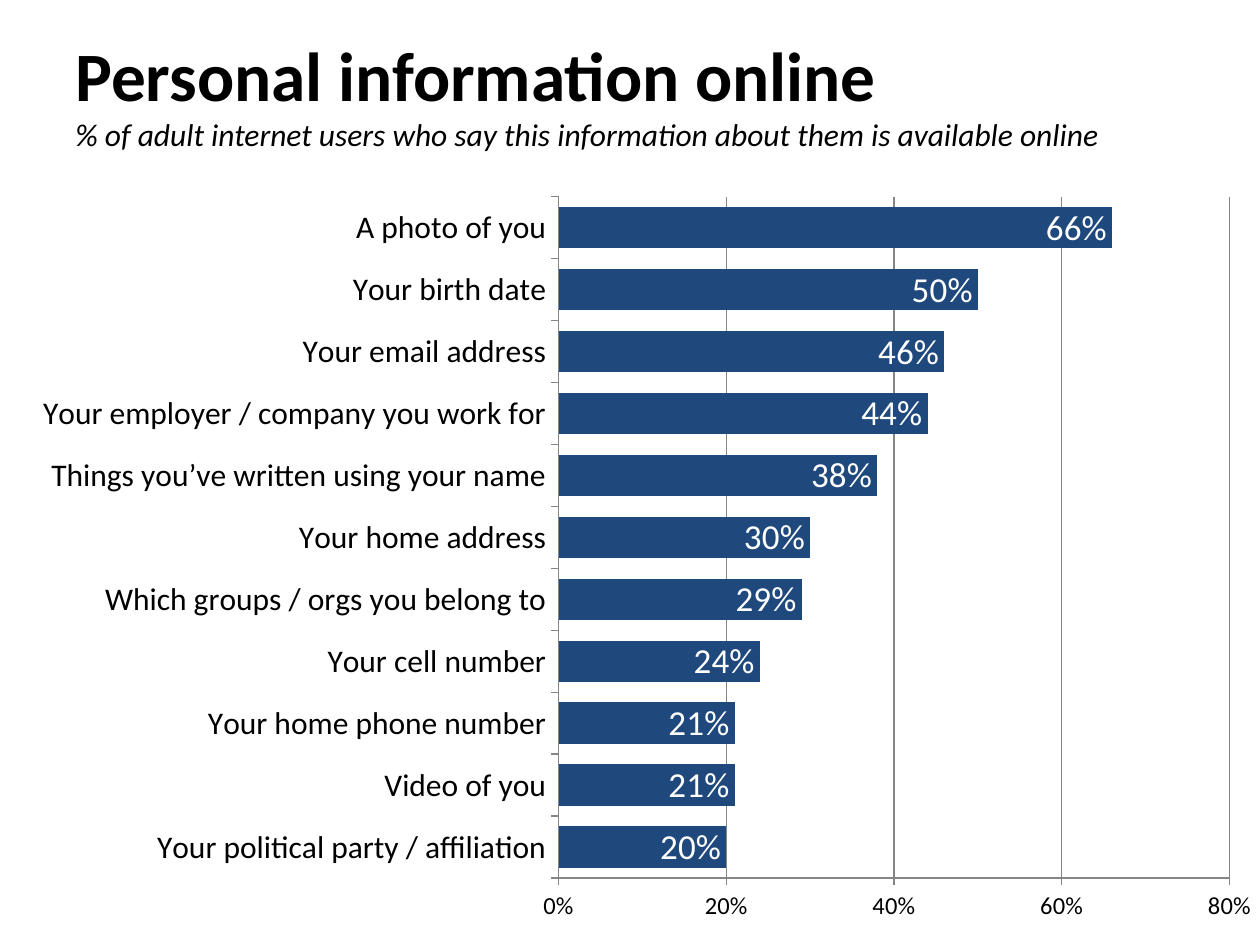
"""Build a slide with a bar chart of personal information available online."""
import pptx
import pptx.chart.data
import pptx.dml.color
import pptx.enum.chart
import pptx.enum.text
import pptx.oxml
import pptx.oxml.ns
import pptx.util

Pt = pptx.util.Pt
BLACK = pptx.dml.color.RGBColor(0x00, 0x00, 0x00)
WHITE = pptx.dml.color.RGBColor(0xFF, 0xFF, 0xFF)
NAVY = pptx.dml.color.RGBColor(0x1F, 0x49, 0x7D)
GRAY = pptx.dml.color.RGBColor(0x86, 0x86, 0x86)
FONT = "Calibri"

TITLE = "Personal information online"
SUBTITLE = "% of adult internet users who say this information about them is available online"
SHARES = [
    ("A photo of you", 0.66),
    ("Your birth date", 0.50),
    ("Your email address", 0.46),
    ("Your employer / company you work for", 0.44),
    ("Things you’ve written using your name", 0.38),
    ("Your home address", 0.30),
    ("Which groups / orgs you belong to", 0.29),
    ("Your cell number", 0.24),
    ("Your home phone number", 0.21),
    ("Video of you", 0.21),
    ("Your political party / affiliation", 0.20),
]
PLOT_AREA = {"x": 0.431, "y": 0.037, "w": 0.45, "h": 0.877}


def style_font(font, size, color=BLACK):
    font.name = FONT
    font.size = Pt(size)
    font.color.rgb = color


def add_heading(page):
    box = page.shapes.add_textbox(Pt(36), Pt(21.6), Pt(648), Pt(62.64))
    frame = box.text_frame
    frame.word_wrap = True
    frame.vertical_anchor = pptx.enum.text.MSO_ANCHOR.MIDDLE
    para = frame.paragraphs[0]
    title = para.add_run()
    title.text = TITLE
    style_font(title.font, 39.6)
    title.font.bold = True
    para.add_line_break()
    subtitle = para.add_run()
    subtitle.text = SUBTITLE
    style_font(subtitle.font, 18)
    subtitle.font.italic = True


def place_plot(chart):
    targets = '<c:layoutTarget val="inner"/><c:xMode val="edge"/><c:yMode val="edge"/>'
    sizes = "".join(f'<c:{side} val="{value}"/>' for side, value in PLOT_AREA.items())
    layout = pptx.oxml.parse_xml(
        f'<c:layout {pptx.oxml.ns.nsdecls("c")}><c:manualLayout>'
        f"{targets}{sizes}</c:manualLayout></c:layout>"
    )
    area = chart.element.chart.plotArea
    for old in area.findall(pptx.oxml.ns.qn("c:layout")):
        area.remove(old)
    area.insert(0, layout)


def add_share_chart(page):
    data = pptx.chart.data.CategoryChartData(number_format="0%")
    rows = SHARES[::-1]
    data.categories = [name for name, share in rows]
    data.add_series("Series 1", [share for name, share in rows])
    chart = page.shapes.add_chart(
        pptx.enum.chart.XL_CHART_TYPE.BAR_STACKED,
        Pt(-48), Pt(96), Pt(852), Pt(444), data,
    ).chart
    chart.has_legend = False
    chart.has_title = False
    style_font(chart.font, 10)
    place_plot(chart)

    for axis, size in ((chart.category_axis, 18), (chart.value_axis, 14)):
        style_font(axis.tick_labels.font, size)
        axis.major_tick_mark = pptx.enum.chart.XL_TICK_MARK.OUTSIDE
        axis.format.line.color.rgb = GRAY
        axis.format.line.width = Pt(0.75)
    scale = chart.value_axis
    scale.minimum_scale, scale.maximum_scale, scale.major_unit = 0, 0.8, 0.2
    scale.tick_labels.number_format = "0%"
    scale.tick_labels.number_format_is_linked = False
    scale.has_major_gridlines = True
    scale.major_gridlines.format.line.color.rgb = GRAY
    scale.major_gridlines.format.line.width = Pt(0.75)

    plot = chart.plots[0]
    plot.gap_width = 50
    plot.overlap = 100
    plot.vary_by_categories = False
    bars = plot.series[0]
    bars.format.fill.solid()
    bars.format.fill.fore_color.rgb = NAVY
    labels = bars.data_labels
    labels.show_value = True
    labels.number_format = "0%"
    labels.number_format_is_linked = False
    labels.position = pptx.enum.chart.XL_LABEL_POSITION.INSIDE_END
    style_font(labels.font, 20, WHITE)


def main():
    deck = pptx.Presentation()
    deck.slide_width, deck.slide_height = Pt(720), Pt(540)
    page = deck.slides.add_slide(deck.slide_layouts[6])
    add_heading(page)
    add_share_chart(page)
    deck.save("out.pptx")


if __name__ == "__main__":
    main()
